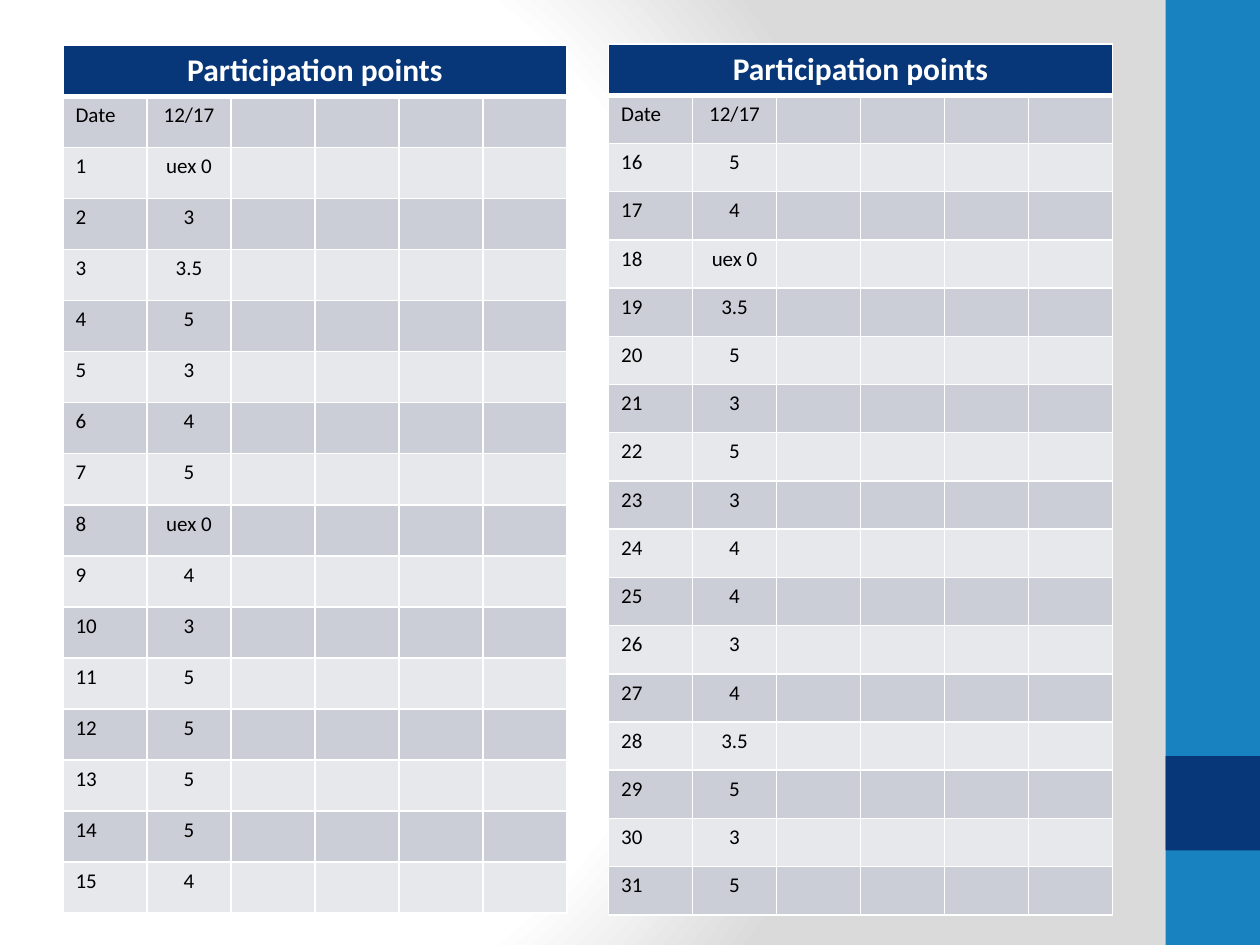
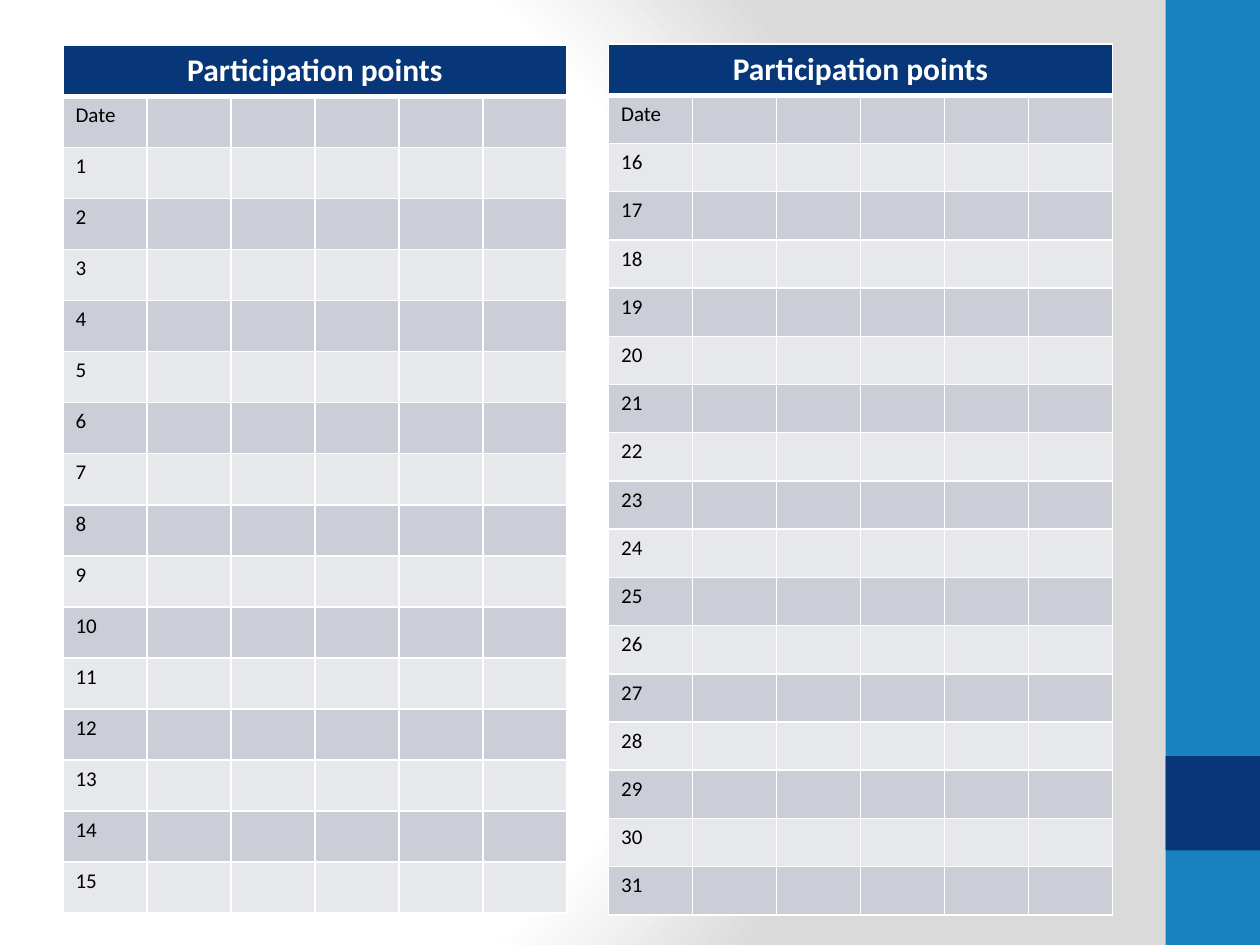
from dataclasses import dataclass

from lxml import etree
from pptx import Presentation
from pptx.dml.color import RGBColor
from pptx.enum.shapes import MSO_SHAPE
from pptx.enum.text import PP_ALIGN
from pptx.oxml import parse_xml
from pptx.oxml.ns import nsdecls, qn
from pptx.util import Inches, Pt

NAVY, BLUE, WHITE, BLACK = "073779", "1782BF", "FFFFFF", "000000"
BANDS = ("CCCED7", "E7E8EC")
BACKDROP = ((0, WHITE), (75, WHITE), (100, "DADADA"))
FONT = "Calibri"
COLUMNS = 6
TABLE_WIDTH = 4


@dataclass(frozen=True)
class Band:
    top: float
    height: float
    color: str


@dataclass(frozen=True)
class Roster:
    left: float
    top: float
    header_height: float
    row_height: float
    first: int
    last: int


@dataclass(frozen=True)
class Session:
    date: str
    points: dict[int, str]


SIDE_BANDS = (Band(0, 7.5, BLUE), Band(6, 0.75, NAVY))
ROSTERS = (
    Roster(0.5, 0.36, 6.89 / 17, 6.89 / 17, 1, 15),
    Roster(4.83, 0.35, 0.4, 6.51 / 17, 16, 31),
)
POINTS = (
    "uex 0", "3", "3.5", "5", "3", "4", "5", "uex 0", "4", "3", "5", "5", "5", "5", "4",
    "5", "4", "uex 0", "3.5", "5", "3", "5", "3", "4", "4", "3", "4", "3.5", "5", "3", "5",
)
SLIDE_SESSIONS = (
    (Session("12/17", dict(enumerate(POINTS, 1))),),
    (),
)


def rgb(color: str) -> RGBColor:
    return RGBColor.from_string(color)


def set_backdrop(master) -> None:
    master.background.fill.solid()
    bg = master.element.find(".//" + qn("p:bgPr"))
    stops = "".join(
        f'<a:gs pos="{pos * 1000}"><a:srgbClr val="{color}"/></a:gs>'
        for pos, color in BACKDROP
    )
    gradient = parse_xml(
        f'<a:gradFill {nsdecls("a")} rotWithShape="1"><a:gsLst>{stops}</a:gsLst>'
        '<a:path path="circle"><a:fillToRect l="20000" t="50000" r="100000" b="50000"/>'
        "</a:path></a:gradFill>"
    )
    bg.replace(bg.find(qn("a:solidFill")), gradient)


def add_band(slide, band: Band) -> None:
    sp = slide.shapes.add_shape(
        MSO_SHAPE.RECTANGLE, Inches(9.25), Inches(band.top), Inches(0.75), Inches(band.height)
    )
    sp.shadow.inherit = False
    sp.fill.solid()
    sp.fill.fore_color.rgb = rgb(band.color)
    sp.line.fill.background()


def set_borders(cell, top: float = 1, bottom: float = 1) -> None:
    tc_pr = cell._tc.get_or_add_tcPr()
    for side, width in (("L", 1), ("R", 1), ("T", top), ("B", bottom)):
        ln = etree.SubElement(tc_pr, qn(f"a:ln{side}"), w=str(Pt(width)))
        fill = etree.SubElement(ln, qn("a:solidFill"))
        etree.SubElement(fill, qn("a:srgbClr"), val=WHITE)


def write_cell(cell, text: str, fill: str, color: str = BLACK, size: int = 12,
               bold: bool = False, centered: bool = True) -> None:
    cell.fill.solid()
    cell.fill.fore_color.rgb = rgb(fill)
    p = cell.text_frame.paragraphs[0]
    if not text:
        etree.SubElement(p._p, qn("a:endParaRPr"), sz=str(size * 100))
        return
    p.text = text
    p.alignment = PP_ALIGN.CENTER if centered else PP_ALIGN.LEFT
    font = p.runs[0].font
    font.name, font.size, font.bold = FONT, Pt(size), bold
    font.color.rgb = rgb(color)


def add_roster(slide, roster: Roster, sessions: tuple[Session, ...]) -> None:
    rows = [["Date", *(s.date for s in sessions)]]
    for number in range(roster.first, roster.last + 1):
        rows.append([str(number), *(s.points[number] for s in sessions)])
    height = roster.header_height + roster.row_height * len(rows)
    table = slide.shapes.add_table(
        len(rows) + 1, COLUMNS, Inches(roster.left), Inches(roster.top),
        Inches(TABLE_WIDTH), Inches(height),
    ).table
    table.first_row = table.horz_banding = False
    for column in table.columns:
        column.width = Inches(TABLE_WIDTH / COLUMNS)
    for i, row in enumerate(table.rows):
        row.height = Inches(roster.row_height if i else roster.header_height)
        for cell in row.cells:
            set_borders(cell, top=3 if i == 1 else 1, bottom=1 if i else 3)

    header = table.cell(0, 0)
    header.merge(table.cell(0, COLUMNS - 1))
    write_cell(header, "Participation points", NAVY, WHITE, 18, bold=True)
    for i, values in enumerate(rows):
        for j in range(COLUMNS):
            text = values[j] if j < len(values) else ""
            write_cell(table.cell(i + 1, j), text, BANDS[i % 2], centered=j > 0)


def main() -> None:
    prs = Presentation()
    prs.slide_width, prs.slide_height = Inches(10), Inches(7.5)
    set_backdrop(prs.slide_master)
    for sessions in SLIDE_SESSIONS:
        slide = prs.slides.add_slide(prs.slide_layouts.get_by_name("Blank"))
        for band in SIDE_BANDS:
            add_band(slide, band)
        for roster in ROSTERS:
            add_roster(slide, roster, sessions)
    prs.save("out.pptx")


if __name__ == "__main__":
    main()
